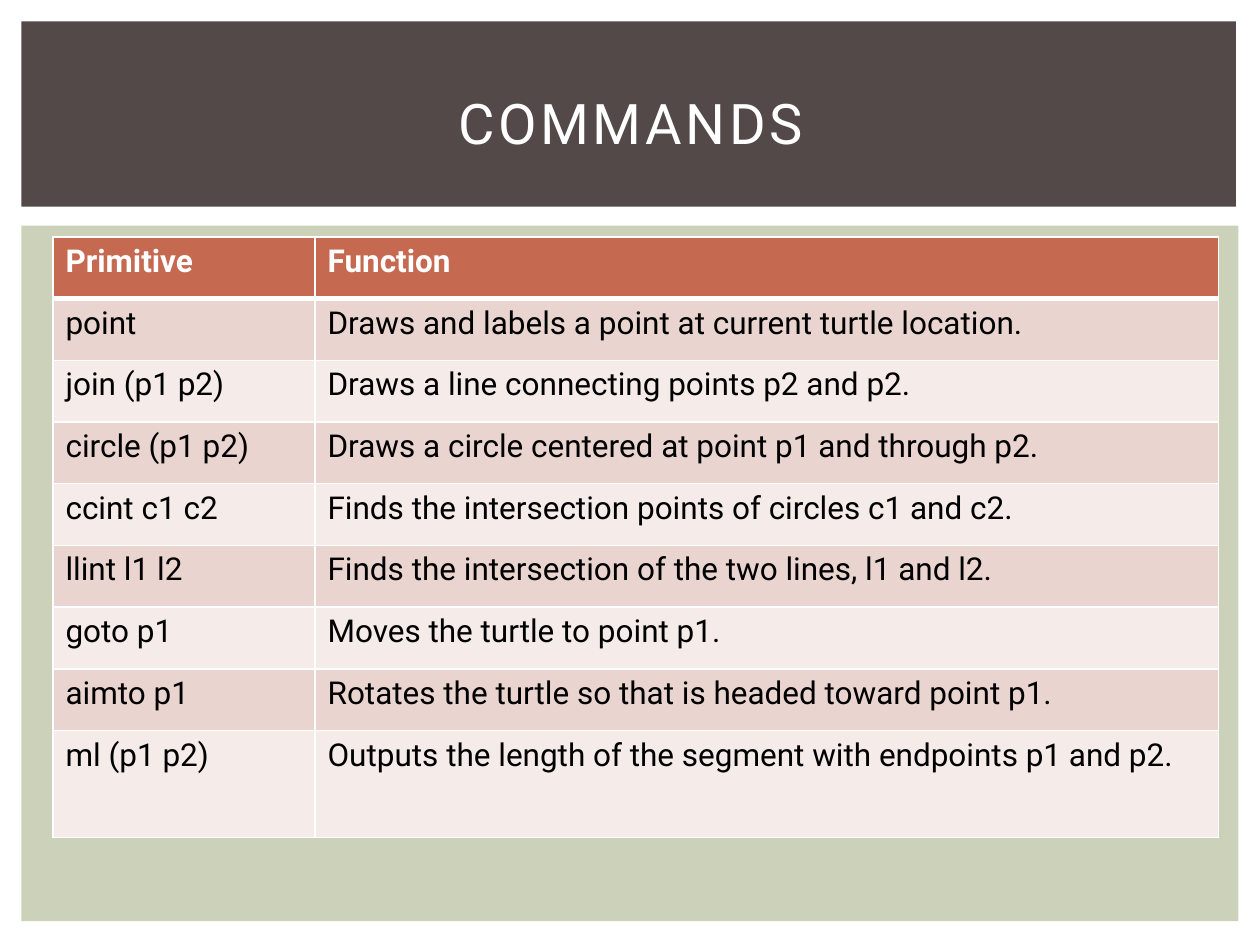
from lxml.etree import SubElement
from pptx import Presentation
from pptx.dml.color import RGBColor
from pptx.enum.shapes import MSO_SHAPE as Shape
from pptx.enum.text import MSO_ANCHOR as Anchor, PP_ALIGN as Align
from pptx.oxml.ns import qn
from pptx.util import Inches, Pt

FONT = "Roboto"
WHITE = RGBColor(0xFF, 0xFF, 0xFF)
BLACK = RGBColor(0x00, 0x00, 0x00)
SAGE = RGBColor(0xCC, 0xD1, 0xB9)
BROWN = RGBColor(0x53, 0x49, 0x49)
RUST = RGBColor(0xC6, 0x69, 0x51)
ROSE = RGBColor(0xEA, 0xD4, 0xD0)
BLUSH = RGBColor(0xF5, 0xEB, 0xE9)

COMMANDS = [
    ("Primitive", "Function"),
    ("point", "Draws and labels a point at current turtle location."),
    ("join (p1 p2)", "Draws a line connecting points p2 and p2."),
    ("circle (p1 p2)", "Draws a circle centered at point p1 and through p2."),
    ("ccint c1 c2", "Finds the intersection points of circles c1 and c2."),
    ("llint l1 l2", "Finds the intersection of the two lines, l1 and l2."),
    ("goto p1", "Moves the turtle to point p1."),
    ("aimto p1", "Rotates the turtle so that is headed toward point p1."),
    ("ml (p1 p2)", "Outputs the length of the segment with endpoints p1 and p2."),
]


def add_panel(page, box, color):
    panel = page.shapes.add_shape(Shape.RECTANGLE, *map(Inches, box))
    panel.shadow.inherit = False
    panel.fill.solid()
    panel.fill.fore_color.rgb = color
    panel.line.fill.background()


def add_span(para, text, size, color, bold=False):
    span = para.add_run()
    span.text = text
    span.font.name = FONT
    span.font.size = Pt(size)
    span.font.bold = bold
    span.font.color.rgb = color
    return span


def add_title(page, box, text):
    frame = page.shapes.add_textbox(*map(Inches, box)).text_frame
    frame.word_wrap = True
    frame.vertical_anchor = Anchor.MIDDLE
    para = frame.paragraphs[0]
    para.alignment = Align.CENTER
    span = add_span(para, text, 32, WHITE)
    span.font._element.set("spc", "200")  # letter spacing, 2 pt


def set_borders(cell, top, bottom):
    properties = cell._tc.get_or_add_tcPr()
    for side, width in (("L", 1), ("R", 1), ("T", top), ("B", bottom)):
        line = SubElement(properties, qn(f"a:ln{side}"), w=str(Pt(width)))
        fill = SubElement(line, qn("a:solidFill"))
        SubElement(fill, qn("a:srgbClr"), val=str(WHITE))


def add_command_table(page, box, rows):
    frame = page.shapes.add_table(len(rows), 2, *map(Inches, box))
    table = frame.table
    for column, width in zip(table.columns, (2.08, 7.17)):
        column.width = Inches(width)

    for row, texts in enumerate(rows):
        header = row == 0
        last = row == len(rows) - 1
        table.rows[row].height = Inches(0.85 if last else 0.49)
        color = RUST if header else ROSE if row % 2 else BLUSH
        for column, text in enumerate(texts):
            cell = table.cell(row, column)
            # The rule below the header is thicker than the others
            set_borders(cell, 3 if row == 1 else 1, 3 if header else 1)
            cell.fill.solid()
            cell.fill.fore_color.rgb = color
            para = cell.text_frame.paragraphs[0]
            add_span(para, text, 18, WHITE if header else BLACK, header)


def main():
    deck = Presentation()
    deck.slide_width, deck.slide_height = Inches(10), Inches(7.5)
    page = deck.slides.add_slide(deck.slide_layouts[6])

    # Background panels
    add_panel(page, (0.17, 1.79, 9.66, 5.52), SAGE)
    add_panel(page, (0.17, 0.17, 9.64, 1.47), BROWN)

    # Content
    add_command_table(page, (0.42, 1.88, 9.25, 4.79), COMMANDS)
    add_title(page, (0.42, 0.39, 9.17, 1.15), "COMMANDS")

    deck.save("out.pptx")


if __name__ == "__main__":
    main()
